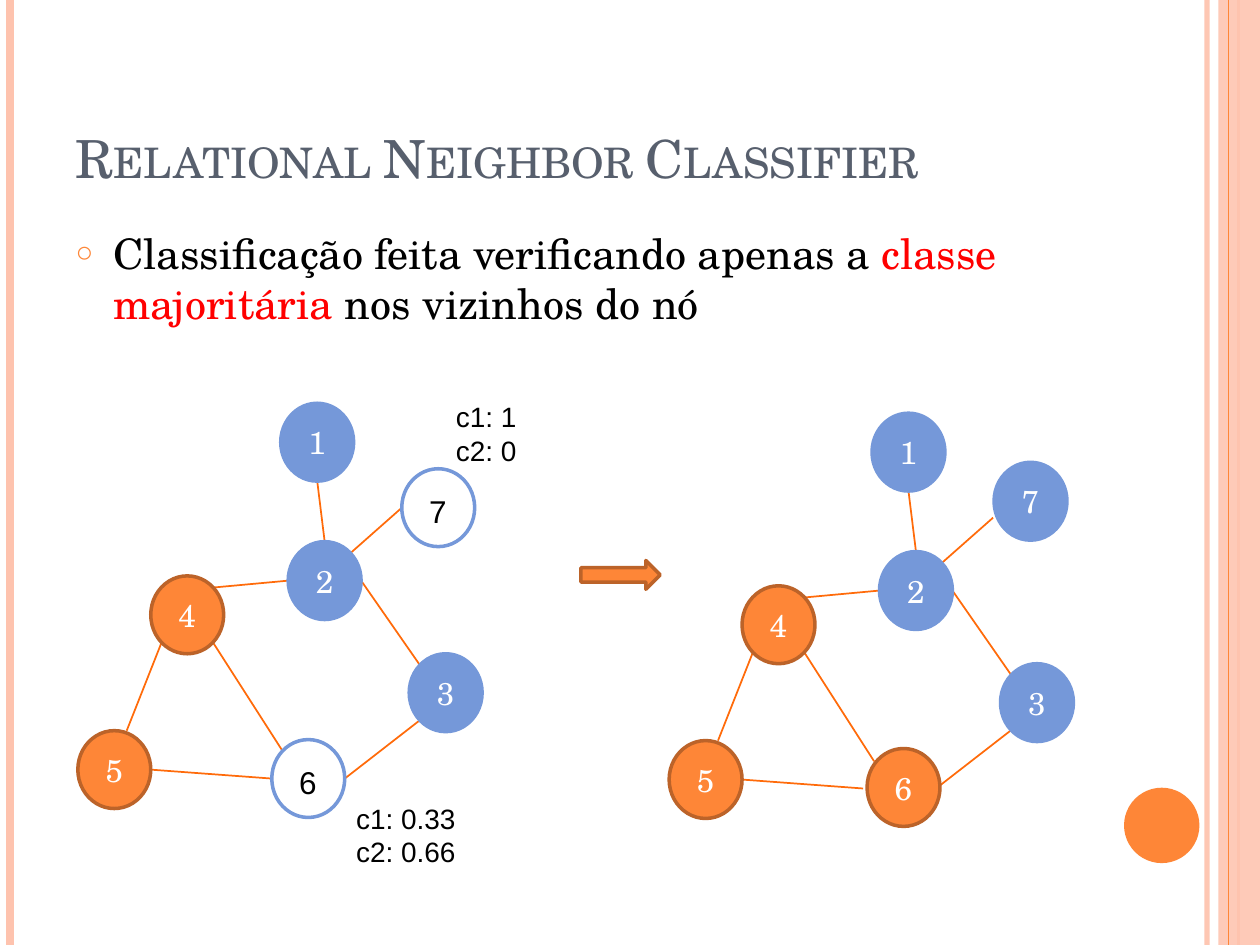
from dataclasses import dataclass

from lxml.etree import SubElement
from pptx import Presentation
from pptx.dml.color import RGBColor
from pptx.enum.shapes import MSO_CONNECTOR, MSO_SHAPE
from pptx.enum.text import MSO_ANCHOR, MSO_AUTO_SIZE, PP_ALIGN
from pptx.oxml.ns import qn
from pptx.util import Cm, Pt


@dataclass(frozen=True)
class Theme:
    serif: str = "TeX Gyre Schola"
    sans: str = "Arial"
    orange: str = "FE8637"
    dark_orange: str = "BC6329"
    edge: str = "FF6B0A"
    pale: str = "FEC3AE"
    blue: str = "7598D9"
    slate: str = "575F6D"
    black: str = "000000"
    white: str = "FFFFFF"
    red: str = "FF0000"
    title_size: int = 30
    body_size: int = 24
    node_size: int = 18
    note_size: int = 16


THEME = Theme()
SLIDE_WIDTH, SLIDE_HEIGHT = 25.4, 19.05
NODE_WIDTH, NODE_HEIGHT = 1.47, 1.57

# Node corners relative to the graph's box, in cm
NODES = {1: (4.09, 0), 2: (4.24, 2.79), 3: (6.68, 5.05), 4: (1.47, 3.48),
         5: (0, 6.6), 6: (3.91, 6.78), 7: (6.53, 1.32)}
CLASSIFIED_SHIFTS = {6: (0.08, -0.02), 7: (0.02, -0.33)}
ORANGE_NODES = {4, 5, 6}

# Points on a node, as fractions of its width and height
TOP, BOTTOM, LEFT, RIGHT = (0.5, 0), (0.5, 1), (0, 0.5), (1, 0.5)
TOP_LEFT, TOP_RIGHT = (0.15, 0.15), (0.85, 0.15)
BOTTOM_LEFT, BOTTOM_RIGHT = (0.15, 0.85), (0.85, 0.85)
EDGES = [(2, TOP, 1, BOTTOM), (2, TOP_RIGHT, 7, LEFT), (4, TOP_RIGHT, 2, LEFT),
         (2, RIGHT, 3, TOP_LEFT), (6, RIGHT, 3, BOTTOM_LEFT),
         (4, BOTTOM_RIGHT, 6, TOP_LEFT), (4, BOTTOM_LEFT, 5, (0.67, 0)),
         (5, RIGHT, 6, LEFT)]


def add_text(paragraph, text, size, color, font=THEME.serif, small_caps=False):
    run = paragraph.add_run()
    run.text = text
    run.font.name = font
    run.font.size = Pt(size)
    run.font.color.rgb = RGBColor.from_string(color)
    if small_caps:
        run.font._element.set("cap", "small")


def set_alpha(element, percent):
    for color in element.iter(qn("a:srgbClr")):
        SubElement(color, qn("a:alpha"), val=str(percent * 1000))


def add_line(slide, start, end, color, width, alpha=None):
    connector = slide.shapes.add_connector(
        MSO_CONNECTOR.STRAIGHT, *(Cm(value) for value in (*start, *end)))
    connector.line.color.rgb = RGBColor.from_string(color)
    connector.line.width = Pt(width)
    if alpha:
        set_alpha(connector.element, alpha)
    SubElement(connector.element.spPr, qn("a:effectLst"))


def add_figure(slide, kind, box, fill=None, line=None):
    shape = slide.shapes.add_shape(kind, *(Cm(value) for value in box))
    shape.shadow.inherit = False
    if fill:
        shape.fill.solid()
        shape.fill.fore_color.rgb = RGBColor.from_string(fill)
    else:
        shape.fill.background()
    if line:
        shape.line.color.rgb = RGBColor.from_string(line)
        shape.line.width = Pt(2)
    else:
        shape.line.fill.background()
    return shape


def add_label(slide, box, lines, size, wrap=True):
    frame = slide.shapes.add_textbox(*(Cm(value) for value in box)).text_frame
    frame.word_wrap = wrap
    frame.auto_size = MSO_AUTO_SIZE.SHAPE_TO_FIT_TEXT
    for index, text in enumerate(lines):
        paragraph = frame.add_paragraph() if index else frame.paragraphs[0]
        add_text(paragraph, text, size, THEME.black, font=THEME.sans)


def place(placeholder, box, anchor):
    placeholder.left, placeholder.top, placeholder.width, placeholder.height = (
        Cm(value) for value in box)
    frame = placeholder.text_frame
    frame.vertical_anchor = anchor
    frame.auto_size = MSO_AUTO_SIZE.NONE
    frame.word_wrap = True
    paragraph = frame.paragraphs[0]
    paragraph.alignment = PP_ALIGN.LEFT
    return paragraph


def add_frame(slide, width, height):
    """Stripes along both sides and the corner disc."""
    band = add_figure(slide, MSO_SHAPE.RECTANGLE,
                      (width - 0.84, 0, 0.84, height), THEME.pale)
    set_alpha(band.element, 87)
    for x, color, weight, alpha in [(0.2, THEME.pale, 4.5, None),
                                    (width - 1.07, THEME.pale, 3, 93),
                                    (width - 0.64, THEME.orange, 0.75, None),
                                    (width - 0.43, THEME.pale, 1.5, None)]:
        add_line(slide, (x, 0), (x, height), color, weight, alpha)
    add_figure(slide, MSO_SHAPE.OVAL,
               (width - 2.74, height - 3.17, 1.52, 1.52), THEME.orange)


def fill_title(slide, box):
    paragraph = place(slide.shapes.title, box, MSO_ANCHOR.BOTTOM)
    add_text(paragraph, "Relational Neighbor Classifier", THEME.title_size,
             THEME.slate, small_caps=True)


def fill_body(slide, box):
    paragraph = place(slide.placeholders[1], box, MSO_ANCHOR.TOP)
    properties = paragraph._p.get_or_add_pPr()
    properties.set("marL", str(Cm(0.76)))
    properties.set("indent", str(Cm(-0.76)))
    SubElement(SubElement(properties, qn("a:buClr")), qn("a:srgbClr"), val=THEME.orange)
    SubElement(properties, qn("a:buSzPct"), val="70000")
    SubElement(properties, qn("a:buChar"), char="○")
    paragraph.space_before = Pt(0)
    for text, color in [("Classificação feita verificando apenas a ", THEME.black),
                        ("classe majoritária ", THEME.red),
                        ("nos vizinhos do nó", THEME.black)]:
        add_text(paragraph, text, THEME.body_size, color)


def add_node(slide, x, y, number, is_open):
    box = (x, y, NODE_WIDTH, NODE_HEIGHT)
    if is_open:
        add_figure(slide, MSO_SHAPE.OVAL, box, line=THEME.blue)
        add_label(slide, (x + 0.3, y + 0.35, 0.8, 0.95), [str(number)],
                  THEME.node_size, wrap=False)
        return
    colors = ((THEME.orange, THEME.dark_orange) if number in ORANGE_NODES
              else (THEME.blue, THEME.blue))
    shape = add_figure(slide, MSO_SHAPE.OVAL, box, *colors)
    shape.text_frame.vertical_anchor = MSO_ANCHOR.MIDDLE
    paragraph = shape.text_frame.paragraphs[0]
    paragraph.alignment = PP_ALIGN.CENTER
    add_text(paragraph, str(number), THEME.node_size, THEME.white)


def add_graph(slide, left, top, open_nodes=(), shifts=None, notes=()):
    """Nodes, edges and class scores, relative to the graph's corner."""
    def point(number, site):
        x, y = NODES[number]
        return (left + x + site[0] * NODE_WIDTH, top + y + site[1] * NODE_HEIGHT)

    for first, first_site, second, second_site in EDGES:
        add_line(slide, point(first, first_site), point(second, second_site),
                 THEME.edge, 1)
    for number, (x, y) in NODES.items():
        shift_x, shift_y = (shifts or {}).get(number, (0, 0))
        add_node(slide, left + x + shift_x, top + y + shift_y, number,
                 number in open_nodes)
    for x, y, lines in notes:
        add_label(slide, (left + x, top + y, 2.77, 1.63), lines, THEME.note_size)


def main():
    presentation = Presentation()
    presentation.slide_width = Cm(SLIDE_WIDTH)
    presentation.slide_height = Cm(SLIDE_HEIGHT)
    slide = presentation.slides.add_slide(presentation.slide_layouts[1])

    add_frame(slide, SLIDE_WIDTH, SLIDE_HEIGHT)
    fill_title(slide, (1.27, 0.76, 20.75, 3.18))
    fill_body(slide, (1.27, 4.45, 20.75, 13.54))

    # Before and after the open nodes are classified
    add_graph(slide, 1.57, 8.13, open_nodes=(6, 7),
              notes=[(5.36, 7.9, ("c1: 0.33", "c2: 0.66")),
                     (7.37, -0.2, ("c1: 1", "c2: 0"))])
    add_figure(slide, MSO_SHAPE.RIGHT_ARROW, (11.71, 11.3, 1.6, 0.58),
               THEME.orange, THEME.dark_orange)
    add_graph(slide, 13.49, 8.33, shifts=CLASSIFIED_SHIFTS)

    presentation.save("out.pptx")


if __name__ == "__main__":
    main()
